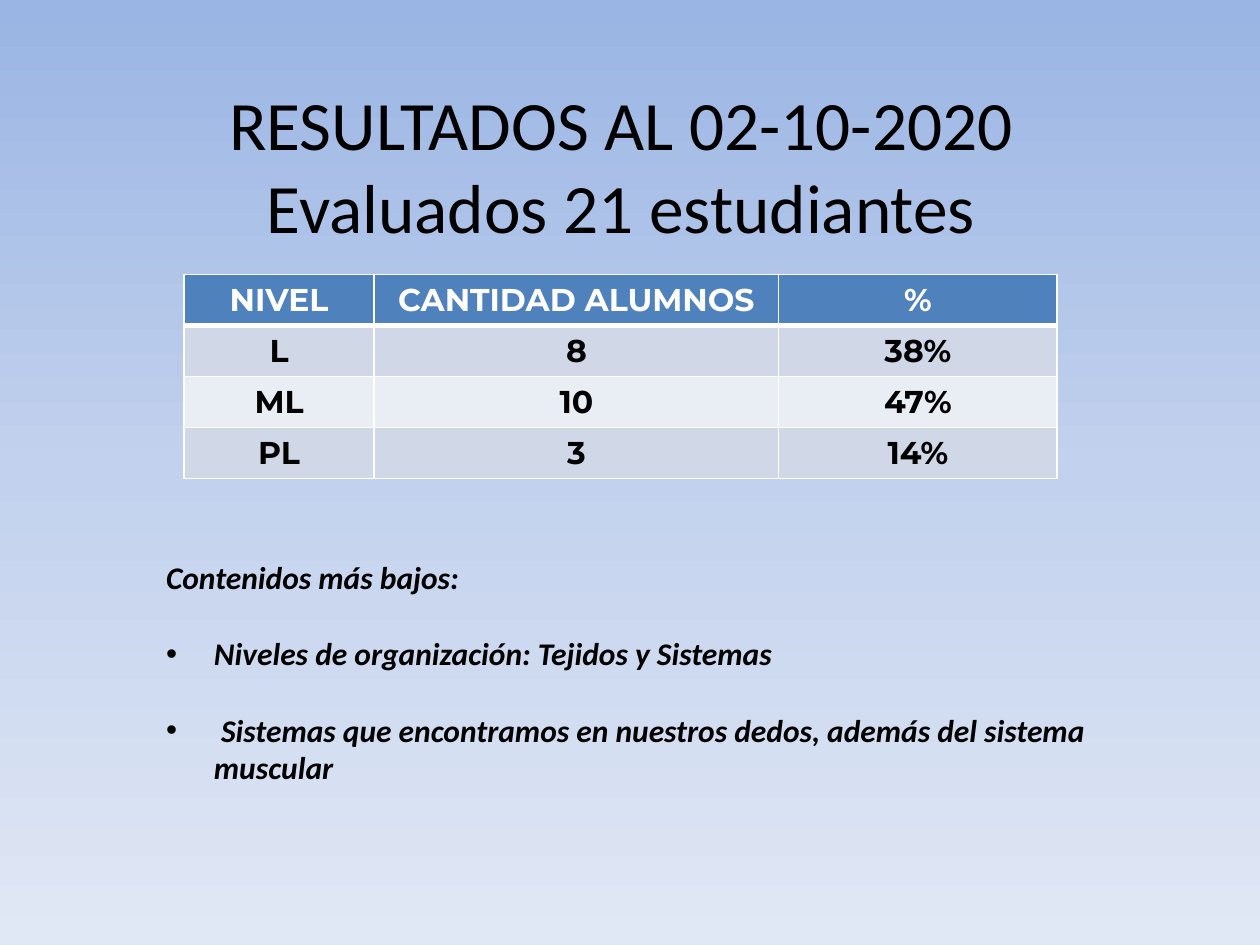
from copy import deepcopy
from dataclasses import dataclass

from lxml.etree import SubElement
from pptx import Presentation
from pptx.dml.color import RGBColor
from pptx.enum.text import MSO_ANCHOR, PP_ALIGN
from pptx.oxml.ns import qn
from pptx.util import Inches, Pt


@dataclass(frozen=True)
class Theme:
    gradient: tuple = ((0, "9AB5E4"), (0.5, "C2D1ED"), (1, "E1E8F5"))
    ink: str = "000000"
    white: str = "FFFFFF"
    header: str = "4F81BD"
    bands: tuple = ("D0D8E8", "E9EDF4")
    text_font: str = "Calibri"
    table_font: str = "Montserrat"
    title_size: float = 39.6
    body_size: float = 18


@dataclass(frozen=True)
class Area:
    left: float
    top: float
    width: float
    height: float

    def lengths(self) -> tuple:
        return tuple(Inches(n) for n in (self.left, self.top, self.width, self.height))


THEME = Theme()
TITLE = ("RESULTADOS AL 02-10-2020", "Evaluados 21 estudiantes")
RESULTS = (
    ("NIVEL", "CANTIDAD ALUMNOS", "%"),
    ("L", "8", "38%"),
    ("ML", "10", "47%"),
    ("PL", "3", "14%"),
)
COLUMN_WIDTHS = (1.51, 3.21, 2.21)
LOWEST_HEADING = "Contenidos más bajos:"
LOWEST_TOPICS = (
    "Niveles de organización: Tejidos y Sistemas",
    " Sistemas que encontramos en nuestros dedos, además del sistema muscular",
)


def write(para, text: str, *, size: float = THEME.body_size, font: str = THEME.text_font,
          color: str = THEME.ink, bold: bool = False, italic: bool = False,
          align=PP_ALIGN.LEFT, before: float = 0) -> None:
    para.alignment = align
    para.space_before = Pt(before)
    span = para.add_run()
    span.text = text
    span.font.size = Pt(size)
    span.font.name = font
    span.font.bold = bold
    span.font.italic = italic
    span.font.color.rgb = RGBColor.from_string(color)


def add_bullet(para, indent: float) -> None:
    properties = para._p.get_or_add_pPr()
    properties.set("marL", str(Inches(indent)))
    properties.set("indent", str(-Inches(indent)))
    SubElement(properties, qn("a:buFont"), typeface="Arial")
    SubElement(properties, qn("a:buChar"), char="•")


def add_borders(cell, bottom: float) -> None:
    properties = cell._tc.get_or_add_tcPr()
    widths = {"a:lnL": 1, "a:lnR": 1, "a:lnT": 1, "a:lnB": bottom}
    for position, (tag, width) in enumerate(widths.items()):
        line = SubElement(properties, qn(tag), w=str(Pt(width)))
        fill = SubElement(line, qn("a:solidFill"))
        SubElement(fill, qn("a:srgbClr"), val=THEME.white)
        properties.insert(position, line)  # borders come before the fill


def paint_background(slide) -> None:
    fill = slide.background.fill
    fill.gradient()
    fill.gradient_angle = 270
    stop_list = slide.background._cSld.find(".//" + qn("a:gsLst"))
    stop_list.insert(1, deepcopy(stop_list[0]))
    for stop, (position, color) in zip(fill.gradient_stops, THEME.gradient):
        stop.position = position
        stop.color.rgb = RGBColor.from_string(color)


def add_text_box(slide, area: Area, anchor=MSO_ANCHOR.TOP):
    frame = slide.shapes.add_textbox(*area.lengths()).text_frame
    frame.word_wrap = True
    frame.vertical_anchor = anchor
    return frame


def add_title(slide, area: Area) -> None:
    para = add_text_box(slide, area, MSO_ANCHOR.MIDDLE).paragraphs[0]
    for number, line in enumerate(TITLE):
        if number:
            para.add_line_break()
        write(para, line, size=THEME.title_size, align=PP_ALIGN.CENTER)


def add_results(slide, area: Area) -> None:
    table = slide.shapes.add_table(len(RESULTS), len(COLUMN_WIDTHS), *area.lengths()).table
    for column, width in zip(table.columns, COLUMN_WIDTHS):
        column.width = Inches(width)
    for number, values in enumerate(RESULTS):
        is_header = number == 0
        fill = THEME.header if is_header else THEME.bands[(number - 1) % 2]
        for column, text in enumerate(values):
            cell = table.cell(number, column)
            cell.fill.solid()
            cell.fill.fore_color.rgb = RGBColor.from_string(fill)
            # The header's lower rule is shared with the row below it
            add_borders(cell, bottom=3 if is_header else 1)
            write(cell.text_frame.paragraphs[0], text, font=THEME.table_font, bold=True,
                  color=THEME.white if is_header else THEME.ink, align=PP_ALIGN.CENTER)


def add_lowest_topics(slide, area: Area) -> None:
    frame = add_text_box(slide, area)
    write(frame.paragraphs[0], LOWEST_HEADING, bold=True, italic=True)
    for topic in LOWEST_TOPICS:
        para = frame.add_paragraph()
        write(para, topic, bold=True, italic=True, before=22)
        add_bullet(para, 0.38)


def main() -> None:
    deck = Presentation()
    deck.slide_width, deck.slide_height = Inches(10), Inches(7.5)
    slide = deck.slides.add_slide(deck.slide_layouts[6])

    paint_background(slide)
    add_title(slide, Area(0.43, 0.68, 9, 1.25))
    add_results(slide, Area(1.46, 2.18, sum(COLUMN_WIDTHS), 1.62))
    add_lowest_topics(slide, Area(1.22, 4.38, 7.8, 2.22))

    deck.save("out.pptx")


if __name__ == "__main__":
    main()
